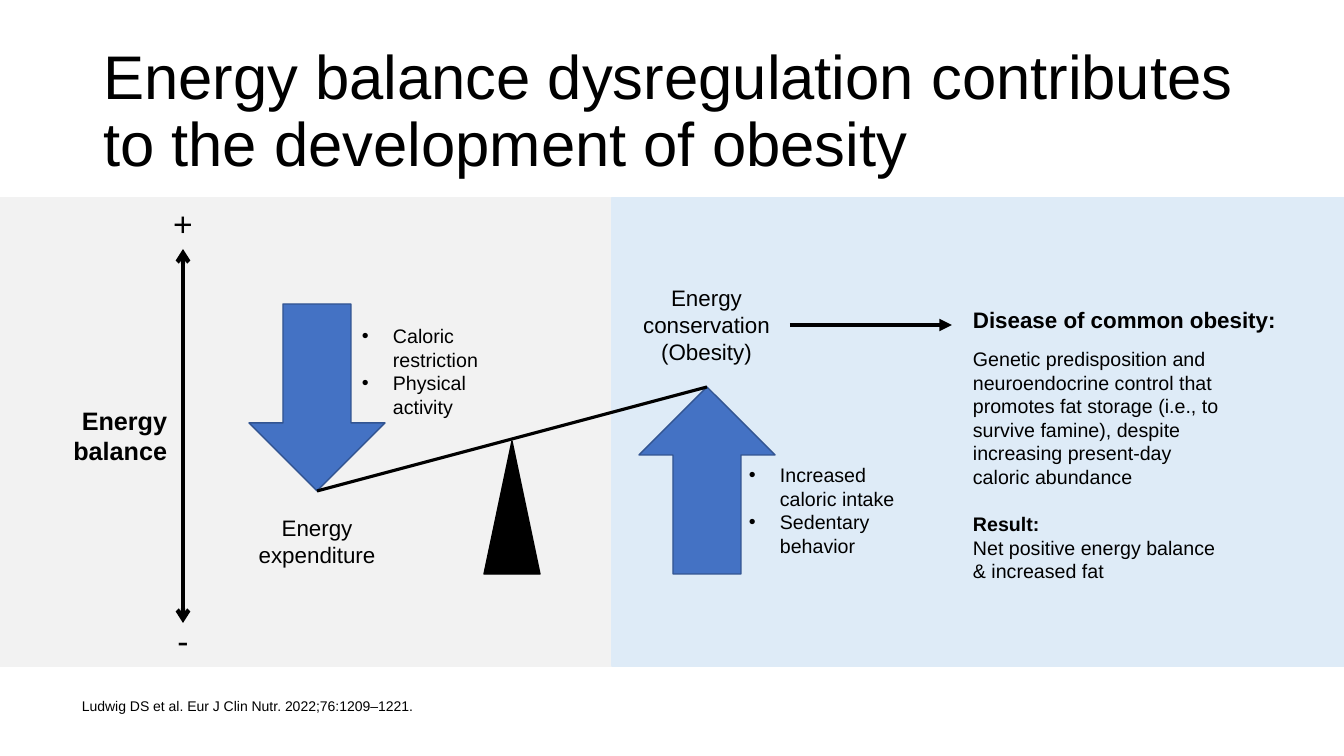
"""Builds a slide on how energy balance dysregulation contributes to obesity."""
from lxml import etree
from pptx import Presentation
from pptx.dml.color import RGBColor
from pptx.enum.shapes import MSO_CONNECTOR, MSO_SHAPE
from pptx.enum.text import MSO_ANCHOR, PP_ALIGN
from pptx.oxml.ns import qn
from pptx.util import Pt

PX = 914400 / 100.8
LEFT, CENTER, RIGHT = PP_ALIGN.LEFT, PP_ALIGN.CENTER, PP_ALIGN.RIGHT
TOP, MIDDLE, BOTTOM = MSO_ANCHOR.TOP, MSO_ANCHOR.MIDDLE, MSO_ANCHOR.BOTTOM
RECTANGLE, TRIANGLE = MSO_SHAPE.RECTANGLE, MSO_SHAPE.ISOSCELES_TRIANGLE
DOWN_ARROW, UP_ARROW = MSO_SHAPE.DOWN_ARROW, MSO_SHAPE.UP_ARROW
STRAIGHT = MSO_CONNECTOR.STRAIGHT
THEME = {
    "font": "Arial",
    "black": RGBColor.from_string("000000"),
    "gray": RGBColor.from_string("F2F2F2"),
    "pale": RGBColor.from_string("DEEBF7"),
    "blue": RGBColor.from_string("4472C4"),
    "edge": RGBColor.from_string("325491"),
    "title": 44, "sign": 24, "axis": 18, "label": 16, "body": 14, "source": 10,
}


def px(*lengths):
    """Turns pixel lengths into EMU."""
    return [round(length * PX) for length in lengths]


def write(box, lines, size, align=LEFT, anchor=TOP, bold=False):
    """Fills a text shape and formats every run."""
    frame = box.text_frame
    frame.text = "\n".join(lines)
    frame.word_wrap = True
    frame.vertical_anchor = anchor
    for para in frame.paragraphs:
        para.alignment = align
        for span in para.runs:
            span.font.name = THEME["font"]
            span.font.size = Pt(THEME[size])
            span.font.bold = bold
            span.font.color.rgb = THEME["black"]


deck = Presentation()
deck.slide_width, deck.slide_height = px(1344, 756)
page = deck.slides.add_slide(deck.slide_layouts[5])

title = page.shapes.title
title.left, title.top, title.width, title.height = px(93, 40, 1159, 146)
write(title, ["Energy balance dysregulation contributes to the development of obesity"],
      "title", anchor=MIDDLE)
title.text_frame.paragraphs[0].line_spacing = 0.9

for kind, place, fill, edge in [
    (RECTANGLE, (0, 198, 1344, 468), "gray", "gray"),
    (RECTANGLE, (612, 198, 732, 468), "pale", "pale"),
    (DOWN_ARROW, (249, 304, 136, 187), "blue", "edge"),
    (UP_ARROW, (639, 387, 136, 187), "blue", "edge"),
    (TRIANGLE, (484, 441, 56, 133), "black", "black"),
]:
    shape = page.shapes.add_shape(kind, *px(*place))
    shape.shadow.inherit = False
    shape.fill.solid()
    shape.fill.fore_color.rgb = THEME[fill]
    shape.line.color.rgb = THEME[edge]
    shape.line.width = Pt(1)

boxes = {}
for name, place, lines, size, align, anchor, bold in [
    ("plus", (150, 198, 66, 51), ["+"], "sign", CENTER, TOP, False),
    ("minus", (150, 615, 66, 51), ["-"], "sign", CENTER, TOP, False),
    ("axis", (58, 400, 119, 72), ["Energy balance"], "axis", RIGHT, TOP, True),
    ("expenditure", (245, 509, 144, 65), ["Energy expenditure"],
     "label", CENTER, TOP, False),
    ("conservation", (623, 279, 167, 92), ["Energy conservation (Obesity)"],
     "label", CENTER, TOP, False),
    ("gain causes", (739, 458, 167, 105),
     ["Increased caloric intake", "Sedentary behavior"], "body", LEFT, TOP, False),
    ("loss causes", (352, 319, 156, 105),
     ["Caloric restriction", "Physical activity"], "body", LEFT, TOP, False),
    ("disease heading", (963, 301, 326, 37), ["Disease of common obesity:"],
     "label", LEFT, TOP, True),
    ("disease", (963, 342, 273, 248),
     ["Genetic predisposition and neuroendocrine control that promotes fat storage "
      "(i.e., to survive famine), despite increasing present-day caloric abundance",
      "Result:", "Net positive energy balance & increased fat"],
     "body", LEFT, TOP, False),
    ("source", (72, 684, 954, 35),
     ["Ludwig DS et al. Eur J Clin Nutr. 2022;76:1209–1221."],
     "source", LEFT, BOTTOM, False),
]:
    boxes[name] = page.shapes.add_textbox(*px(*place))
    write(boxes[name], lines, size, align, anchor, bold)

result = boxes["disease"].text_frame.paragraphs[1]
result.space_before = Pt(17)
result.runs[0].font.bold = True

indent = px(31)[0]
for name in ("gain causes", "loss causes"):
    for para in boxes[name].text_frame.paragraphs:
        settings = para._p.get_or_add_pPr()
        settings.set("marL", str(indent))
        settings.set("indent", str(-indent))
        etree.SubElement(settings, qn("a:buFont"), typeface=THEME["font"])
        etree.SubElement(settings, qn("a:buChar"), char="•")

for ends, width, heads, joint in [
    ((183, 249, 183, 623), 3, {"headEnd": "arrow", "tailEnd": "arrow"}, ("plus", 2)),
    ((317, 491, 707, 387), 2.25, {}, None),
    ((790, 325, 952, 325), 3, {"tailEnd": "triangle"}, ("conservation", 3)),
]:
    line = page.shapes.add_connector(STRAIGHT, *px(*ends))
    line.line.color.rgb = THEME["black"]
    line.line.width = Pt(width)
    if joint:
        line.begin_connect(boxes[joint[0]], joint[1])
    for end, style in heads.items():
        etree.SubElement(line.line._get_or_add_ln(), qn(f"a:{end}"), type=style)
    etree.SubElement(line._element.spPr, qn("a:effectLst"))

deck.save("out.pptx")
